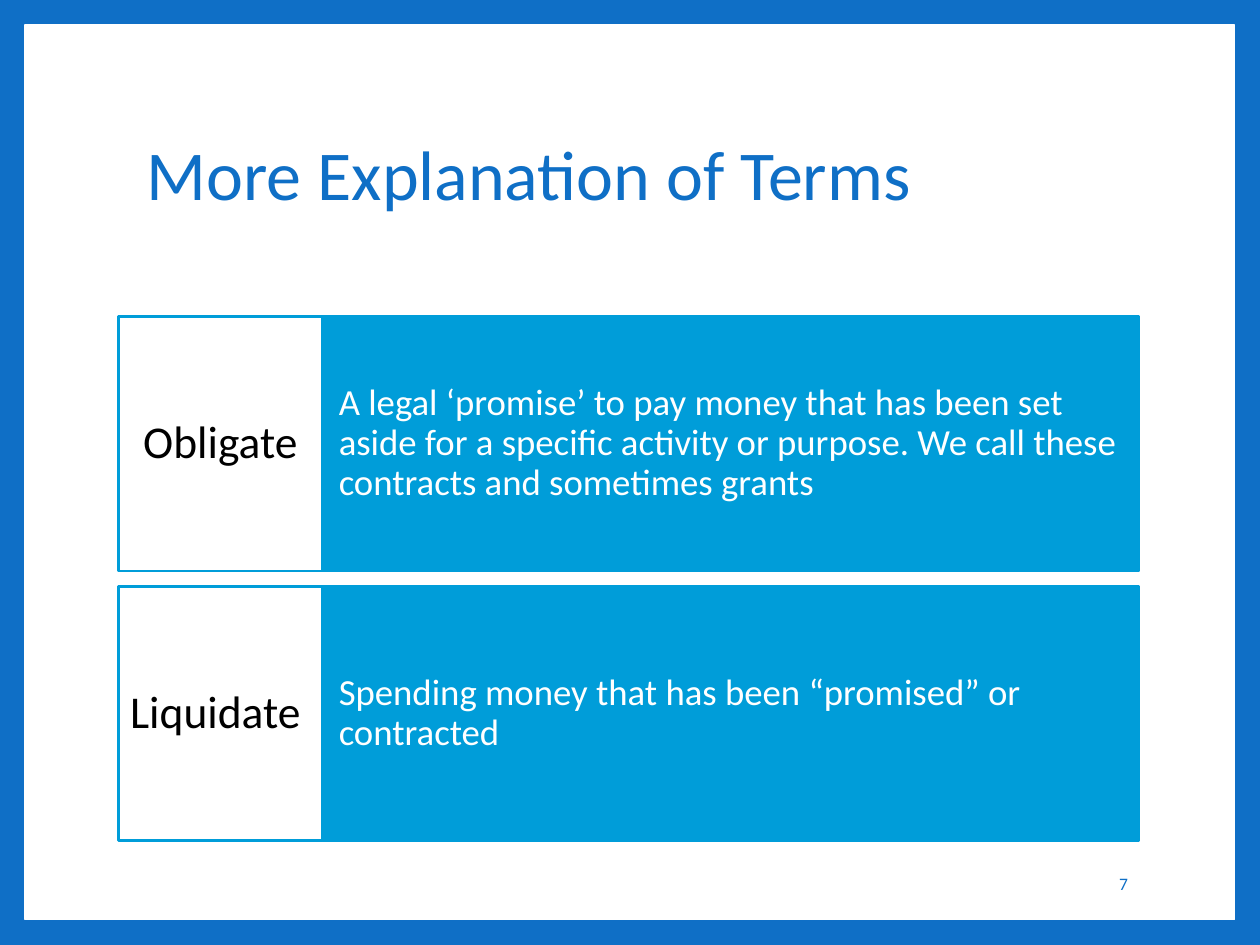
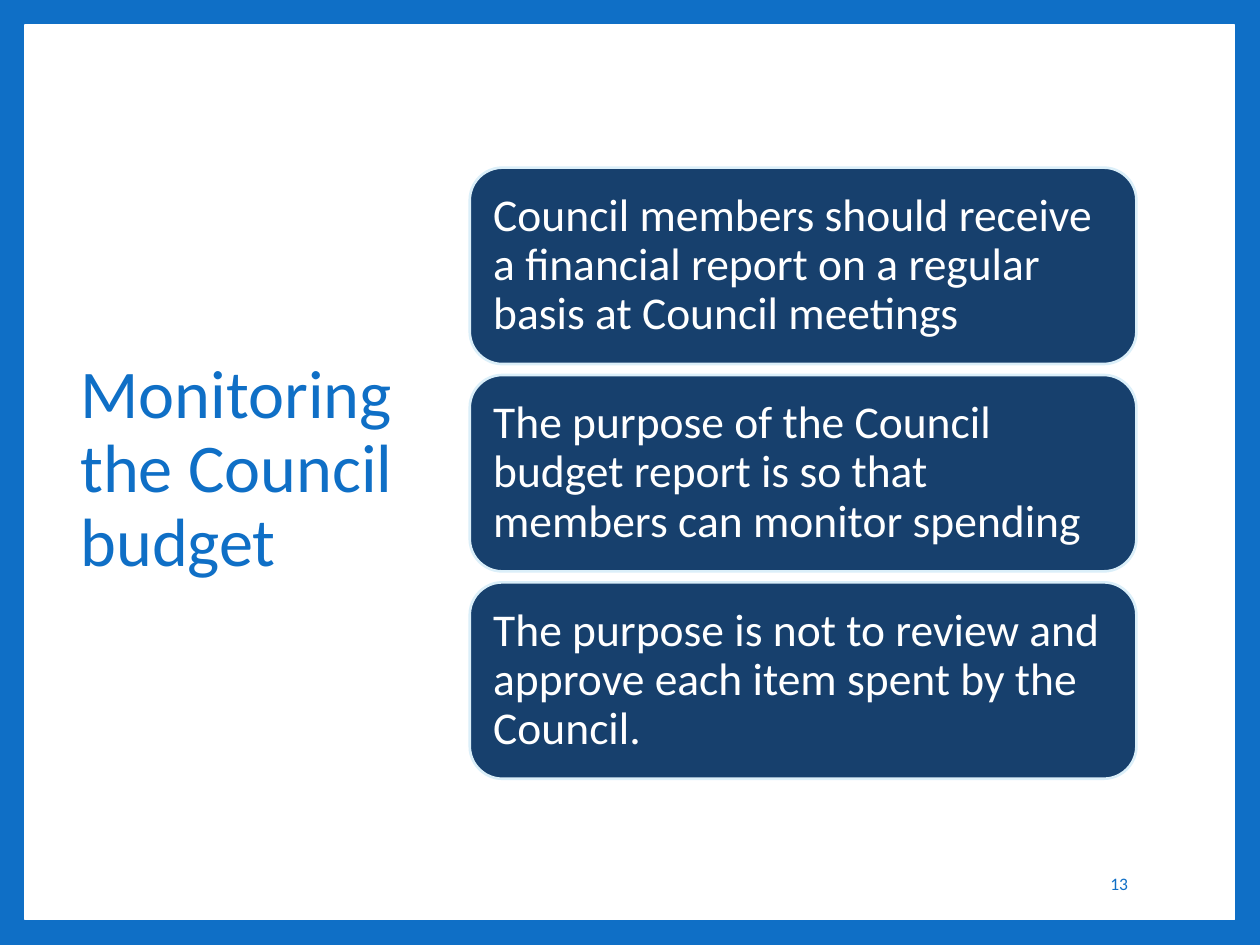
from pptx import Presentation
from pptx.dml.color import RGBColor
from pptx.enum.shapes import MSO_SHAPE
from pptx.enum.text import MSO_ANCHOR, MSO_AUTO_SIZE, PP_ALIGN
from pptx.util import Cm, Pt

# Content
TERMS_TITLE = "More Explanation of Terms"
TERMS = [
    # term, its left and right insets, definition
    ("Obligate", (0.23, 0.23),
     "A legal ‘promise’ to pay money that has been set aside for a specific "
     "activity or purpose. We call these contracts and sometimes grants"),
    ("Liquidate", (0.13, 0.33),
     "Spending money that has been “promised” or contracted"),
]
MONITORING_TITLE = "Monitoring the Council budget"
MONITORING_POINTS = [
    "Council members should receive a financial report on a regular basis "
    "at Council meetings",
    "The purpose of the Council budget report is so that members can "
    "monitor spending",
    "The purpose is not to review and approve each item spent by the Council.",
]

# Shared look; lengths in centimetres
COLORS = {
    "frame": "0F6FC6", "panel": "FFFFFF", "definition": "009DD9",
    "card": "17406D", "card_edge": "DBEFF9", "light": "FFFFFF", "dark": "000000",
}
FONT = "Calibri"
SLIDE_WIDTH, SLIDE_HEIGHT = 25.4, 19.05
FRAME = 0.51
NUMBER_BOX = (19.43, 17.3, 3.56, 1.02)


def rgb(name):
    return RGBColor.from_string(COLORS[name])


def write(holder, text, size, color, align=PP_ALIGN.LEFT, spacing=0.9,
          insets=(0.25, 0.25)):
    """Put one vertically centred paragraph into a shape."""
    frame = holder.text_frame
    frame.text = text
    paragraph = frame.paragraphs[0]
    left, right = insets
    formats = [
        (frame, {"word_wrap": True, "auto_size": MSO_AUTO_SIZE.NONE,
                 "vertical_anchor": MSO_ANCHOR.MIDDLE,
                 "margin_left": Cm(left), "margin_right": Cm(right)}),
        (paragraph, {"alignment": align, "line_spacing": spacing}),
        (paragraph.runs[0].font, {"name": FONT, "size": Pt(size)}),
    ]
    for target, values in formats:
        for attribute, value in values.items():
            setattr(target, attribute, value)
    paragraph.runs[0].font.color.rgb = rgb(color)


def add_block(slide, kind, box, fill, edge, edge_width=1.5):
    block = slide.shapes.add_shape(kind, *map(Cm, box))
    block.shadow.inherit = False
    block.fill.solid()
    block.fill.fore_color.rgb = rgb(fill)
    block.line.color.rgb = rgb(edge)
    block.line.width = Pt(edge_width)
    return block


def add_framed_slide(deck, title, title_box, title_size, number, insets=(0.25, 0.25)):
    """Slide with coloured frame, white panel, title and page number."""
    slide = deck.slides.add_slide(deck.slide_layouts[5])
    slide.background.fill.solid()
    slide.background.fill.fore_color.rgb = rgb("frame")

    # White panel behind everything else
    panel = add_block(slide, MSO_SHAPE.RECTANGLE,
                      (FRAME, FRAME, SLIDE_WIDTH - 2 * FRAME, SLIDE_HEIGHT - 2 * FRAME),
                      "panel", "panel", 1)
    slide.shapes.title._element.addprevious(panel._element)

    heading = slide.shapes.title
    for side, length in zip(("left", "top", "width", "height"), title_box):
        setattr(heading, side, Cm(length))
    write(heading, title, title_size, "frame", insets=insets)

    page_number = slide.shapes.add_textbox(*map(Cm, NUMBER_BOX))
    write(page_number, number, 10, "frame", PP_ALIGN.RIGHT, 1.0)
    return slide


def build_terms(deck):
    slide = add_framed_slide(deck, TERMS_TITLE, (2.39, 1.7, 20.57, 3.76), 40, "7",
                             insets=(0.57, 0.25))
    left, top, height, gap = 2.39, 6.38, 5.13, 0.31
    term_width, definition_width = 4.11, 16.46
    for row, (term, term_insets, definition) in enumerate(TERMS):
        y = top + row * (height + gap)
        definition_block = add_block(
            slide, MSO_SHAPE.RECTANGLE,
            (left + term_width, y, definition_width, height), "definition", "definition")
        write(definition_block, definition, 21, "light", insets=(0.33, 0.33))
        term_block = add_block(slide, MSO_SHAPE.RECTANGLE,
                               (left, y, term_width, height), "panel", "definition")
        write(term_block, term, 26, "dark", PP_ALIGN.CENTER, insets=term_insets)


def build_monitoring(deck):
    slide = add_framed_slide(deck, MONITORING_TITLE, (1.37, 1.7, 7.01, 15.57), 39, "13")
    left, top, width, height, gap = 9.47, 3.38, 13.44, 3.96, 0.22
    for row, point in enumerate(MONITORING_POINTS):
        card = add_block(slide, MSO_SHAPE.ROUNDED_RECTANGLE,
                         (left, top + row * (height + gap), width, height),
                         "card", "card_edge")
        # The rounded corners already inset the text by about 0.2 cm
        write(card, point, 26, "light", insets=(0.28, 0.28))


def main():
    deck = Presentation()
    deck.slide_width, deck.slide_height = Cm(SLIDE_WIDTH), Cm(SLIDE_HEIGHT)
    build_terms(deck)
    build_monitoring(deck)
    deck.save("out.pptx")


if __name__ == "__main__":
    main()
